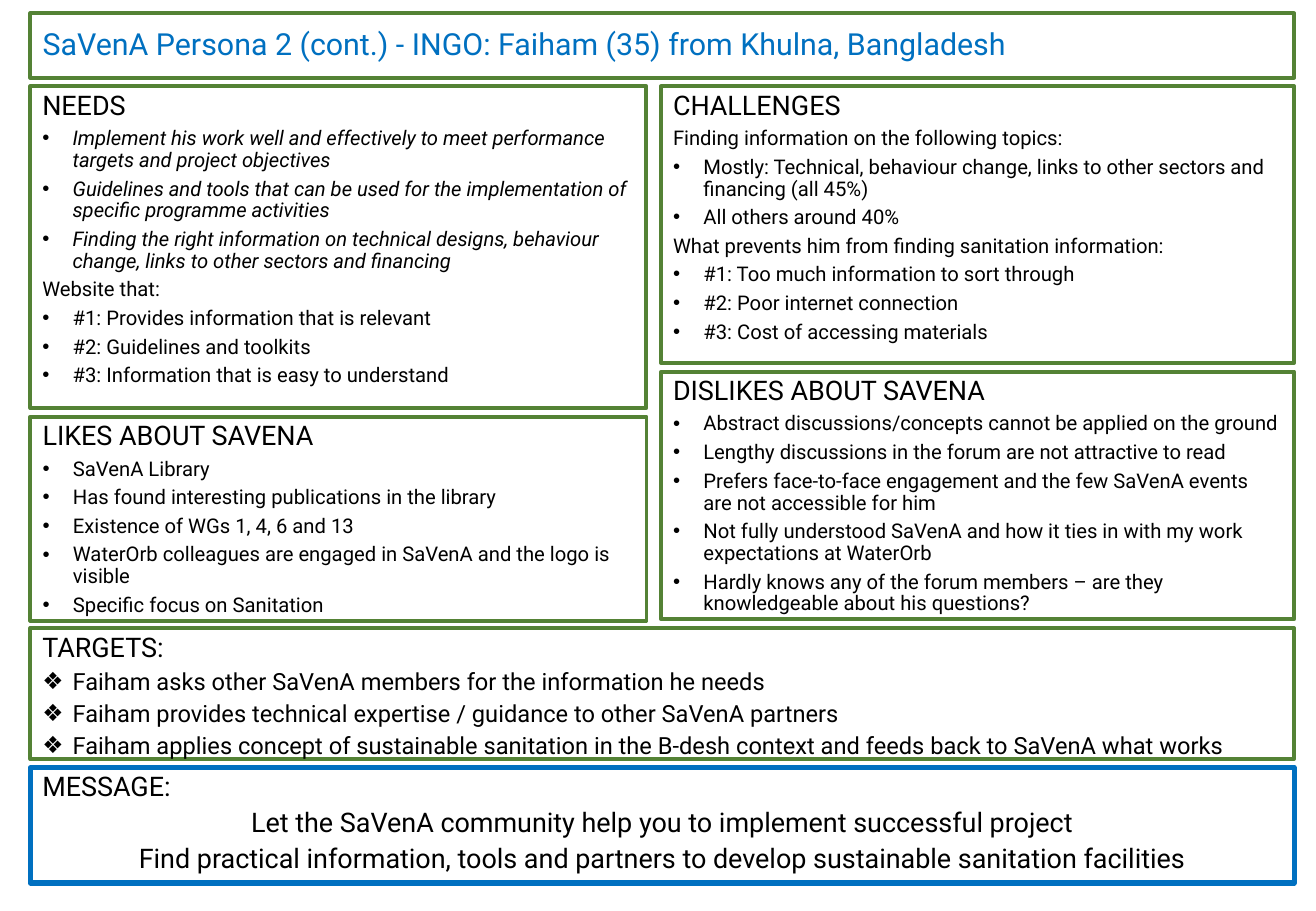
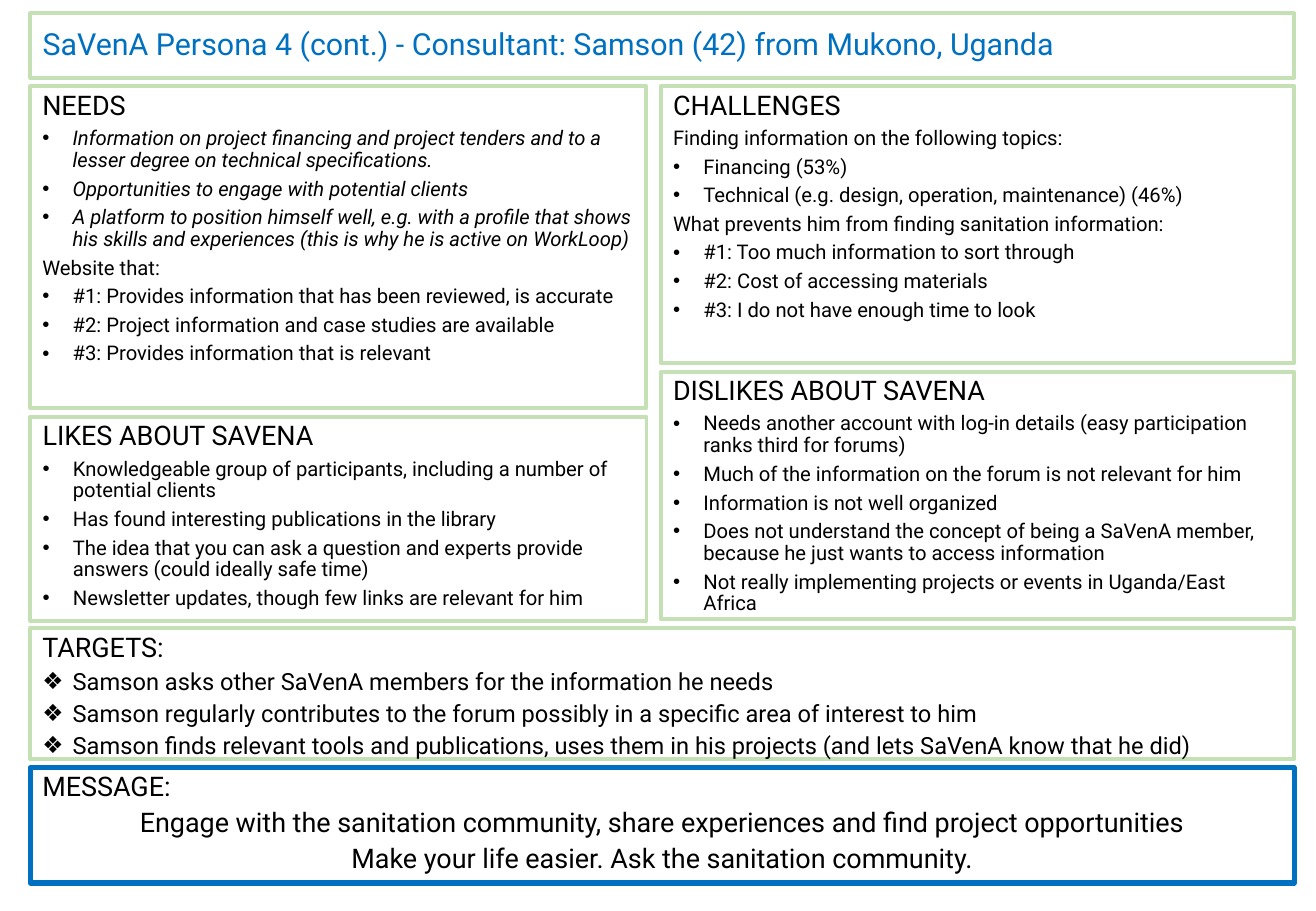
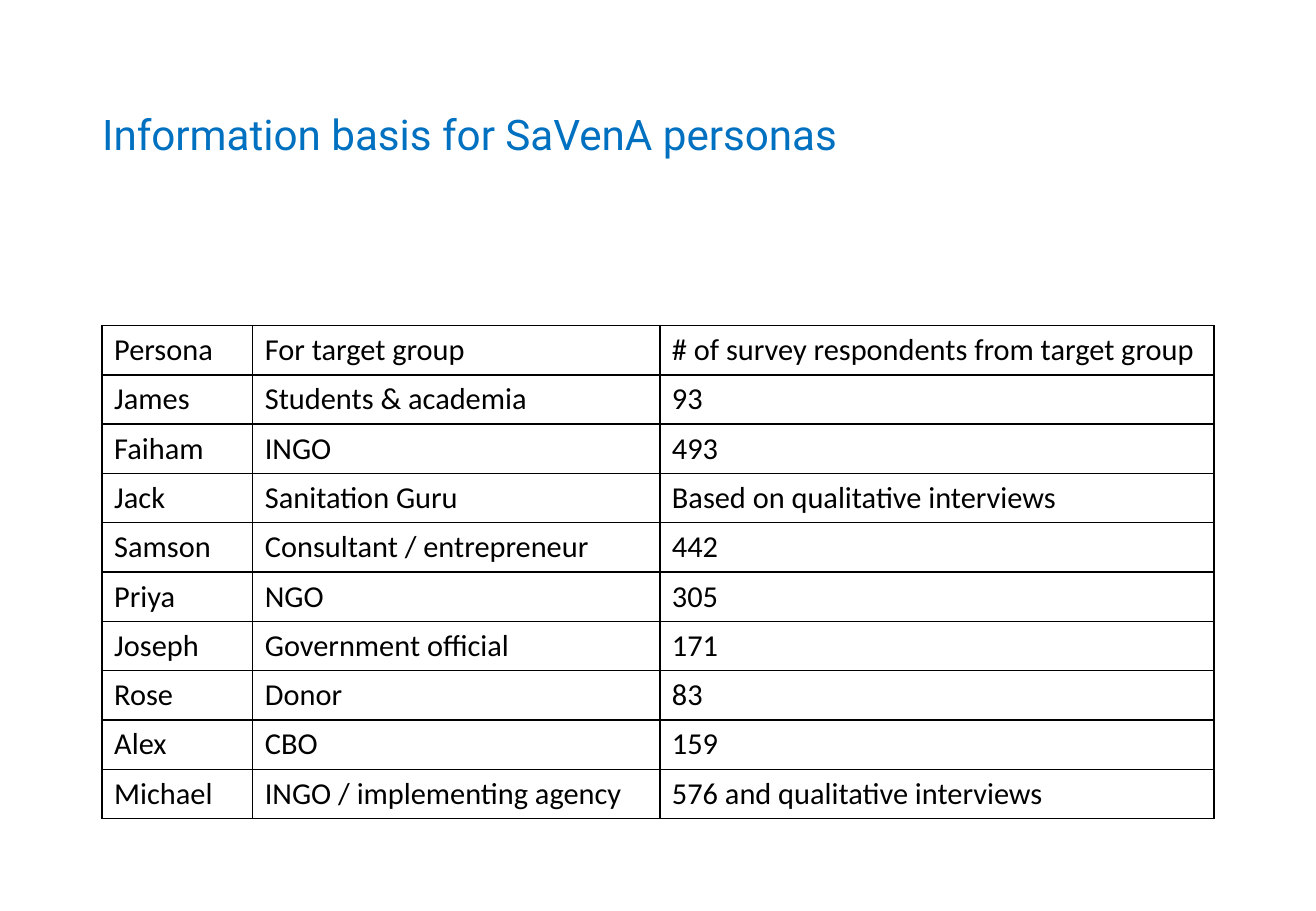
from pptx import Presentation
from pptx import util as u
from pptx.dml.color import RGBColor
from pptx.enum import shapes, text
from pptx.oxml import ns, xmlchemy

SLIDE_SIZE = (10.83, 7.5)
COLORS = {"blue": "0070C0", "green": "548235", "pale": "C5E0B4", "black": "000000", "white": "FFFFFF"}
GAP = 0.07
PAGE = (0.25, 0.11, 10.4, 7.16)
PAGE_ROWS = (0.53, 4.39, 1.08, 0.95)
COLUMNS = (5.07, 5.21)
LEFT_ROWS = (2.65, 1.68)
RIGHT_ROWS = (2.28, 2.04)

STYLES = {
    "title": {"size": 18, "color": "blue", "before": 0},
    "table title": {"size": 25, "color": "blue", "before": 0},
    "heading": {"size": 16},
    "plain": {"size": 12},
    "bullet": {"size": 12, "bullet": "•"},
    "italic": {"size": 12, "bullet": "•", "italic": True},
    "target": {"size": 14, "bullet": "❖"},
    "message": {"size": 16, "align": text.PP_ALIGN.CENTER},
}

FAIHAM = {
    "title": [("title", ["SaVenA Persona 2 (cont.) - INGO: Faiham (35) from Khulna, Bangladesh"])],
    "needs": [
        ("heading", ["NEEDS"]),
        ("italic", [
            "Implement his work well and effectively to meet performance targets and project objectives",
            "Guidelines and tools that can be used for the implementation of specific programme activities",
            "Finding the right information on technical designs, behaviour change, links to other sectors and financing",
        ]),
        ("plain", ["Website that:"]),
        ("bullet", [
            "#1: Provides information that is relevant",
            "#2: Guidelines and toolkits",
            "#3: Information that is easy to understand",
        ]),
    ],
    "challenges": [
        ("heading", ["CHALLENGES"]),
        ("plain", ["Finding information on the following topics:"]),
        ("bullet", [
            "Mostly: Technical, behaviour change, links to other sectors and financing (all 45%)",
            "All others around 40%",
        ]),
        ("plain", ["What prevents him from finding sanitation information:"]),
        ("bullet", [
            "#1: Too much information to sort through",
            "#2: Poor internet connection",
            "#3: Cost of accessing materials",
        ]),
    ],
    "likes": [
        ("heading", ["LIKES ABOUT SAVENA"]),
        ("bullet", [
            "SaVenA Library",
            "Has found interesting publications in the library",
            "Existence of WGs 1, 4, 6 and 13",
            "WaterOrb colleagues are engaged in SaVenA and the logo is visible",
            "Specific focus on Sanitation",
        ]),
    ],
    "dislikes": [
        ("heading", ["DISLIKES ABOUT SAVENA"]),
        ("bullet", [
            "Abstract discussions/concepts cannot be applied on the ground",
            "Lengthy discussions in the forum are not attractive to read",
            "Prefers face-to-face engagement and the few SaVenA events are not accessible for him",
            "Not fully understood SaVenA and how it ties in with my work expectations at WaterOrb",
            "Hardly knows any of the forum members – are they knowledgeable about his questions?",
        ]),
    ],
    "targets": [
        ("heading", ["TARGETS:"]),
        ("target", [
            "Faiham asks other SaVenA members for the information he needs",
            "Faiham provides technical expertise / guidance to other SaVenA partners",
            "Faiham applies concept of sustainable sanitation in the B-desh context and feeds back to SaVenA what works",
        ]),
    ],
    "message": [
        ("heading", ["MESSAGE:"]),
        ("message", [
            "Let the SaVenA community help you to implement successful project",
            "Find practical information, tools and partners to develop sustainable sanitation facilities",
        ]),
    ],
}

SAMSON = {
    "title": [("title", ["SaVenA Persona 4 (cont.) - Consultant: Samson (42) from Mukono, Uganda"])],
    "needs": [
        ("heading", ["NEEDS"]),
        ("italic", [
            "Information on project financing and project tenders and to a lesser degree on technical specifications.",
            "Opportunities to engage with potential clients",
            "A platform to position himself well, e.g. with a profile that shows his skills and experiences "
            "(this is why he is active on WorkLoop)",
        ]),
        ("plain", ["Website that:"]),
        ("bullet", [
            "#1: Provides information that has been reviewed, is accurate",
            "#2: Project information and case studies are available",
            "#3: Provides information that is relevant",
        ]),
    ],
    "challenges": [
        ("heading", ["CHALLENGES"]),
        ("plain", ["Finding information on the following topics:"]),
        ("bullet", ["Financing (53%)", "Technical (e.g. design, operation, maintenance) (46%)"]),
        ("plain", ["What prevents him from finding sanitation information:"]),
        ("bullet", [
            "#1: Too much information to sort through",
            "#2: Cost of accessing materials",
            "#3: I do not have enough time to look",
        ]),
    ],
    "likes": [
        ("heading", ["LIKES ABOUT SAVENA"]),
        ("bullet", [
            "Knowledgeable group of participants, including a number of potential clients",
            "Has found interesting publications in the library",
            "The idea that you can ask a question and experts provide answers (could ideally safe time)",
            "Newsletter updates, though few links are relevant for him",
        ]),
    ],
    "dislikes": [
        ("heading", ["DISLIKES ABOUT SAVENA"]),
        ("bullet", [
            "Needs another account with log-in details (easy participation ranks third for forums)",
            "Much of the information on the forum is not relevant for him",
            "Information is not well organized",
            "Does not understand the concept of being a SaVenA member, because he just wants to access information",
            "Not really implementing projects or events in Uganda/East Africa",
        ]),
    ],
    "targets": [
        ("heading", ["TARGETS:"]),
        ("target", [
            "Samson asks other SaVenA members for the information he needs",
            "Samson regularly contributes to the forum possibly in a specific area of interest to him",
            "Samson finds relevant tools and publications, uses them in his projects (and lets SaVenA know that he did)",
        ]),
    ],
    "message": [
        ("heading", ["MESSAGE:"]),
        ("message", [
            "Engage with the sanitation community, share experiences and find project opportunities",
            "Make your life easier. Ask the sanitation community.",
        ]),
    ],
}

TABLE_TITLE = [("table title", ["Information basis for SaVenA personas"])]
TABLE_COLUMNS = (1.24, 3.35, 4.56)
RESPONDENTS = [
    ("Persona", "For target group", "# of survey respondents from target group"),
    ("James", "Students & academia", "93"),
    ("Faiham", "INGO", "493"),
    ("Jack", "Sanitation Guru", "Based on qualitative interviews"),
    ("Samson", "Consultant / entrepreneur", "442"),
    ("Priya", "NGO", "305"),
    ("Joseph", "Government official", "171"),
    ("Rose", "Donor", "83"),
    ("Alex", "CBO", "159"),
    ("Michael", "INGO / implementing agency", "576 and qualitative interviews"),
]


def rgb(name):
    """Return the named colour."""
    return RGBColor.from_string(COLORS[name])


def apply(target, values):
    """Set each attribute of the target from a dict."""
    for name, value in values.items():
        setattr(target, name, value)


def add_child(parent, tag, **attributes):
    """Append an XML element with attributes and return it."""
    child = xmlchemy.OxmlElement(tag)
    for name, value in attributes.items():
        child.set(name, str(value))
    parent.append(child)
    return child


def rows_of(box, heights):
    """Split a box into stacked rows with equal gaps."""
    left, top, width, _ = box
    return [(left, top + sum(heights[:i]) + GAP * i, width, height) for i, height in enumerate(heights)]


def columns_of(box, widths):
    """Split a box into side-by-side columns that fill its width."""
    left, top, width, height = box
    gap = (width - sum(widths)) / (len(widths) - 1)
    return [(left + sum(widths[:i]) + gap * i, top, part, height) for i, part in enumerate(widths)]


def place(shape, box):
    """Move and size a shape to a box in inches."""
    apply(shape, dict(zip(("left", "top", "width", "height"), map(u.Inches, box))))


def format_font(font, name, size, color="black", italic=False):
    """Format a font."""
    apply(font, {"name": name, "size": u.Pt(size), "italic": italic})
    font.color.rgb = rgb(color)


def format_paragraph(paragraph, size, color="black", before=4, bullet=None, italic=False,
                     align=text.PP_ALIGN.LEFT):
    """Format a paragraph with its spacing, bullet and font."""
    apply(paragraph, {"alignment": align, "line_spacing": 0.9,
                      "space_before": u.Pt(before), "space_after": u.Pt(0)})
    properties = paragraph._p.get_or_add_pPr()
    indent = u.Inches(0.25) if bullet else 0
    properties.set("marL", str(indent))
    properties.set("indent", str(-indent))
    if bullet:
        add_child(properties, "a:buFont", typeface="Arial")
        add_child(properties, "a:buChar", char=bullet)
    else:
        add_child(properties, "a:buNone")
    for run in paragraph.runs:
        format_font(run.font, "Roboto", size, color, italic)


def write(shape, groups, anchor):
    """Fill a shape with groups of styled paragraphs."""
    frame = shape.text_frame
    apply(frame, {"word_wrap": True, "auto_size": text.MSO_AUTO_SIZE.NONE, "vertical_anchor": anchor})
    lines = [(style, line) for style, group in groups for line in group]
    for index, (style, line) in enumerate(lines):
        paragraph = frame.add_paragraph() if index else frame.paragraphs[0]
        paragraph.text = line
        format_paragraph(paragraph, **STYLES[style])


def draw_panel(slide, box, groups, color, width=2.25, shape=None, anchor=text.MSO_ANCHOR.TOP):
    """Draw an outlined panel, using a placeholder when one is given."""
    if shape is None:
        shape = slide.shapes.add_shape(shapes.MSO_SHAPE.RECTANGLE, 0, 0, 0, 0)
        shape.shadow.inherit = False
    place(shape, box)
    shape.fill.solid()
    shape.fill.fore_color.rgb = rgb("white")
    add_child(shape._element.spPr.find(ns.qn("a:solidFill"))[0], "a:alpha", val=60000)
    shape.line.color.rgb = rgb(color)
    shape.line.width = u.Pt(width)
    write(shape, groups, anchor)


def build_persona(presentation, persona, color):
    """Build a persona slide of seven panels."""
    slide = presentation.slides.add_slide(presentation.slide_layouts[1])
    header, middle, targets, message = rows_of(PAGE, PAGE_ROWS)
    left, right = columns_of(middle, COLUMNS)
    needs, likes = rows_of(left, LEFT_ROWS)
    challenges, dislikes = rows_of(right, RIGHT_ROWS)
    draw_panel(slide, header, persona["title"], color, shape=slide.shapes.title, anchor=text.MSO_ANCHOR.MIDDLE)
    draw_panel(slide, likes, persona["likes"], color, shape=slide.placeholders[1])
    boxes = {"needs": needs, "challenges": challenges, "dislikes": dislikes, "targets": targets}
    for name, box in boxes.items():
        draw_panel(slide, box, persona[name], color)
    draw_panel(slide, message, persona["message"], "blue", width=3)


def draw_table(slide, box, rows, widths):
    """Draw a plain table with thin black borders."""
    table = slide.shapes.add_table(len(rows), len(widths), *map(u.Inches, box)).table
    apply(table, {"first_row": False, "horz_banding": False})
    for column, width in zip(table.columns, widths):
        column.width = u.Inches(width)
    for row, values in zip(table.rows, rows):
        for cell, value in zip(row.cells, values):
            cell.text = value
            format_font(cell.text_frame.paragraphs[0].runs[0].font, "Calibri", 18)
            properties = cell._tc.get_or_add_tcPr()
            for side in "LRTB":
                line = add_child(properties, f"a:ln{side}", w=u.Pt(1))
                add_child(add_child(line, "a:solidFill"), "a:srgbClr", val=COLORS["black"])
            cell.fill.background()


def build_basis(presentation):
    """Build the slide with the table of respondents."""
    slide = presentation.slides.add_slide(presentation.slide_layouts[5])
    place(slide.shapes.title, (0.74, 0.4, 9.34, 1.45))
    write(slide.shapes.title, TABLE_TITLE, text.MSO_ANCHOR.MIDDLE)
    draw_table(slide, (0.84, 2.68, sum(TABLE_COLUMNS), 4.06), RESPONDENTS, TABLE_COLUMNS)


def main():
    """Build and save the presentation."""
    presentation = Presentation()
    apply(presentation, dict(zip(("slide_width", "slide_height"), map(u.Inches, SLIDE_SIZE))))
    build_persona(presentation, FAIHAM, "green")
    build_persona(presentation, SAMSON, "pale")
    build_basis(presentation)
    presentation.save("out.pptx")


if __name__ == "__main__":
    main()
